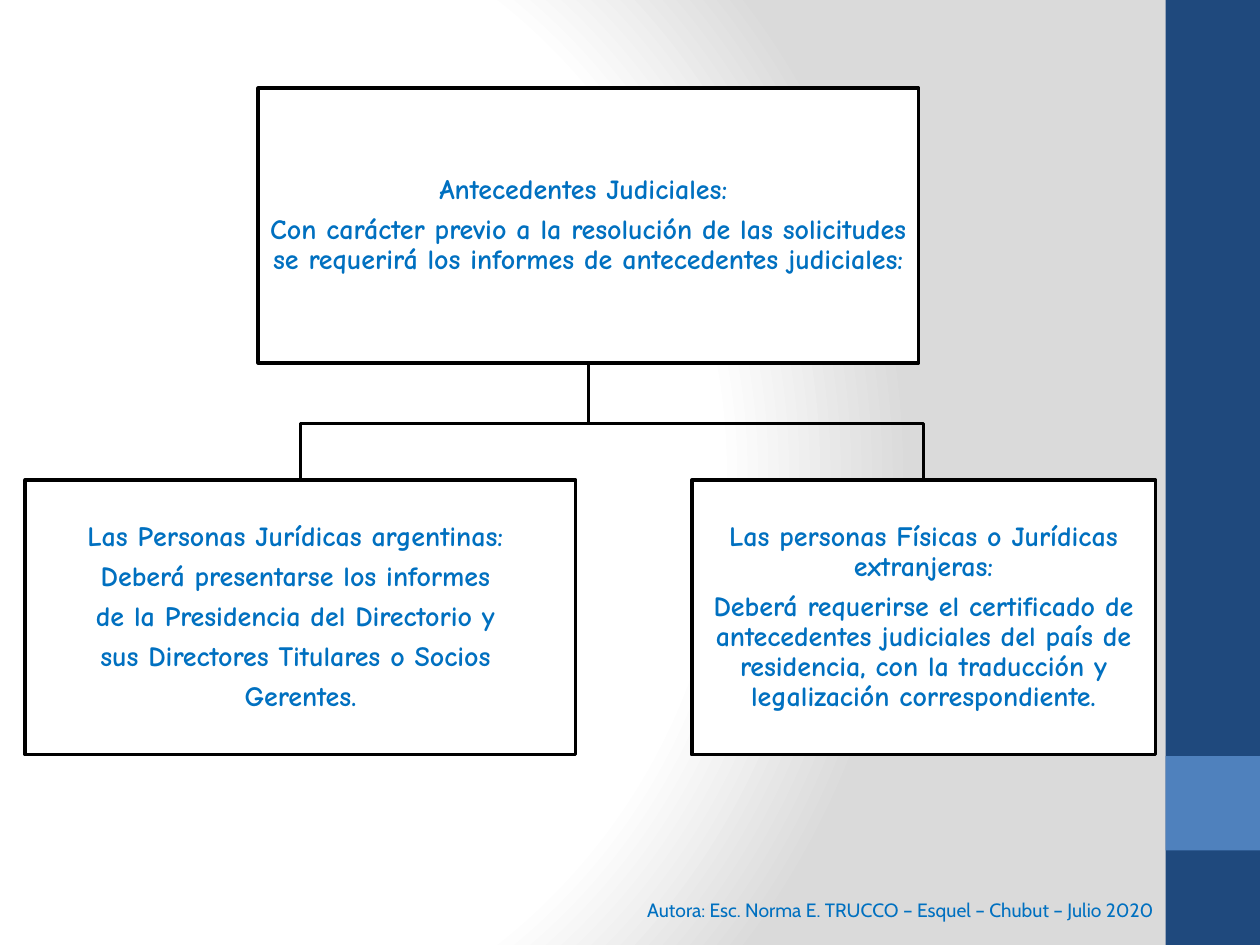
from dataclasses import dataclass
from pptx import Presentation
from pptx.dml.color import RGBColor
from pptx.enum.shapes import MSO_SHAPE
from pptx.enum.text import MSO_ANCHOR, PP_ALIGN
from pptx.oxml import parse_xml
from pptx.oxml.ns import nsdecls, qn
from pptx.util import Inches, Pt


@dataclass(frozen=True)
class Theme:
    """Colours, fonts and sizes of the slide."""
    navy: str = "1F497D"
    blue: str = "4F81BD"
    white: str = "FFFFFF"
    grey: str = "DADADA"
    black: str = "000000"
    ink: str = "0070C0"
    hand: str = "Comic Neue"
    sans: str = "Cabin"
    body: float = 16
    small: float = 11
    line: float = 2


def write(frame, lines, font, size, color, bold=False, align=PP_ALIGN.CENTER,
          inset=None, space=None, after=0):
    """Fill a text frame with one paragraph per line."""
    frame.word_wrap = True
    frame.vertical_anchor = MSO_ANCHOR.MIDDLE
    if inset is not None:
        frame.margin_left = frame.margin_right = Inches(inset)
        frame.margin_top = frame.margin_bottom = Inches(inset)
    for num, text in enumerate(lines):
        para = frame.add_paragraph() if num else frame.paragraphs[0]
        para.alignment = align
        para.line_spacing = space
        para.space_after = Pt(after)
        run = para.add_run()
        run.text = text
        run.font.name = font
        run.font.size = Pt(size)
        run.font.bold = bold
        run.font.color.rgb = RGBColor.from_string(color)


class Page:
    """Hold the style and the current slide."""

    def __init__(self, slide, theme):
        """Keep the slide and its theme."""
        self.slide = slide
        self.theme = theme

    def backdrop(self, stops):
        """Paint a circular gradient behind everything."""
        self.slide.background.fill.solid()
        marks = "".join(
            f'<a:gs pos="{pos * 1000}"><a:srgbClr val="{color}"/></a:gs>'
            for pos, color in stops)
        grad = parse_xml(
            f'<a:gradFill {nsdecls("a")} rotWithShape="1"><a:gsLst>{marks}</a:gsLst>'
            '<a:path path="circle"><a:fillToRect l="20000" t="50000" '
            'r="100000" b="50000"/></a:path></a:gradFill>')
        solid = next(self.slide.element.iter(qn("a:solidFill")))
        solid.getparent().replace(solid, grad)

    def style(self, shape, fill=None, line=None):
        """Set the fill and line of a shape and drop its shadow."""
        shape.shadow.inherit = False
        if fill:
            shape.fill.solid()
            shape.fill.fore_color.rgb = RGBColor.from_string(fill)
        else:
            shape.fill.background()
        if line:
            shape.line.color.rgb = RGBColor.from_string(line)
            shape.line.width = Pt(self.theme.line)
        else:
            shape.line.fill.background()

    def block(self, area, fill, line=None):
        """Add a plain rectangle."""
        shape = self.slide.shapes.add_shape(MSO_SHAPE.RECTANGLE, *map(Inches, area))
        self.style(shape, fill, line)
        return shape

    def box(self, area, lines):
        """Add a framed chart box with its text."""
        look = self.theme
        shape = self.block(area, look.white, look.black)
        write(shape.text_frame, lines, look.hand, look.body, look.ink, bold=True,
              inset=0.01, space=0.9, after=0.35 * look.body)

    def branch(self, root, kid, level):
        """Draw a bent line from the foot of one area to the top of another."""
        left, top, width, height = root
        mid, spot = left + width / 2, kid[0] + kid[2] / 2
        start, *rest = [
            (Inches(x), Inches(y)) for x, y in
            ((mid, top + height), (mid, level), (spot, level), (spot, kid[1]))]
        pen = self.slide.shapes.build_freeform(*start)
        pen.add_line_segments(rest, close=False)
        self.style(pen.convert_to_shape(), line=self.theme.black)

    def credit(self, area, text):
        """Add the author line."""
        look = self.theme
        note = self.slide.shapes.add_textbox(*map(Inches, area))
        write(note.text_frame, [text], look.sans, look.small, look.ink,
              align=PP_ALIGN.RIGHT)


def main():
    """Build and save the slide."""
    deck = Presentation()
    deck.slide_width, deck.slide_height = Inches(10), Inches(7.5)
    look = Theme()
    page = Page(deck.slides.add_slide(deck.slide_layouts[6]), look)

    page.backdrop([(0, look.white), (75, look.white), (100, look.grey)])
    page.block((9.25, 0, 0.75, 7.5), look.navy)
    page.block((9.25, 6, 0.75, 0.75), look.blue)

    tall, row = 2.18, 3.81
    root = (2.05, 0.7, 5.24, tall)
    local = (0.2, row, 4.37, tall)
    abroad = (5.49, row, 3.68, tall)
    for kid in (abroad, local):
        page.branch(root, kid, 3.36)

    page.box(root, [
        "Antecedentes Judiciales: ",
        "Con carácter previo a la resolución de las solicitudes "
        "se requerirá los informes de antecedentes judiciales:",
    ])
    page.box(local, [
        "Las Personas Jurídicas argentinas: ",
        "Deberá presentarse los informes ",
        "de la Presidencia del Directorio y ",
        "sus Directores Titulares o Socios ",
        "Gerentes.",
    ])
    page.box(abroad, [
        "Las personas Físicas o Jurídicas extranjeras:",
        "Deberá requerirse el certificado de antecedentes judiciales del país "
        "de residencia, con la traducción y legalización correspondiente.",
    ])
    page.credit((3.42, 7.02, 5.84, 0.4),
                "Autora: Esc. Norma E. TRUCCO – Esquel – Chubut – Julio 2020")
    deck.save("out.pptx")


if __name__ == "__main__":
    main()
